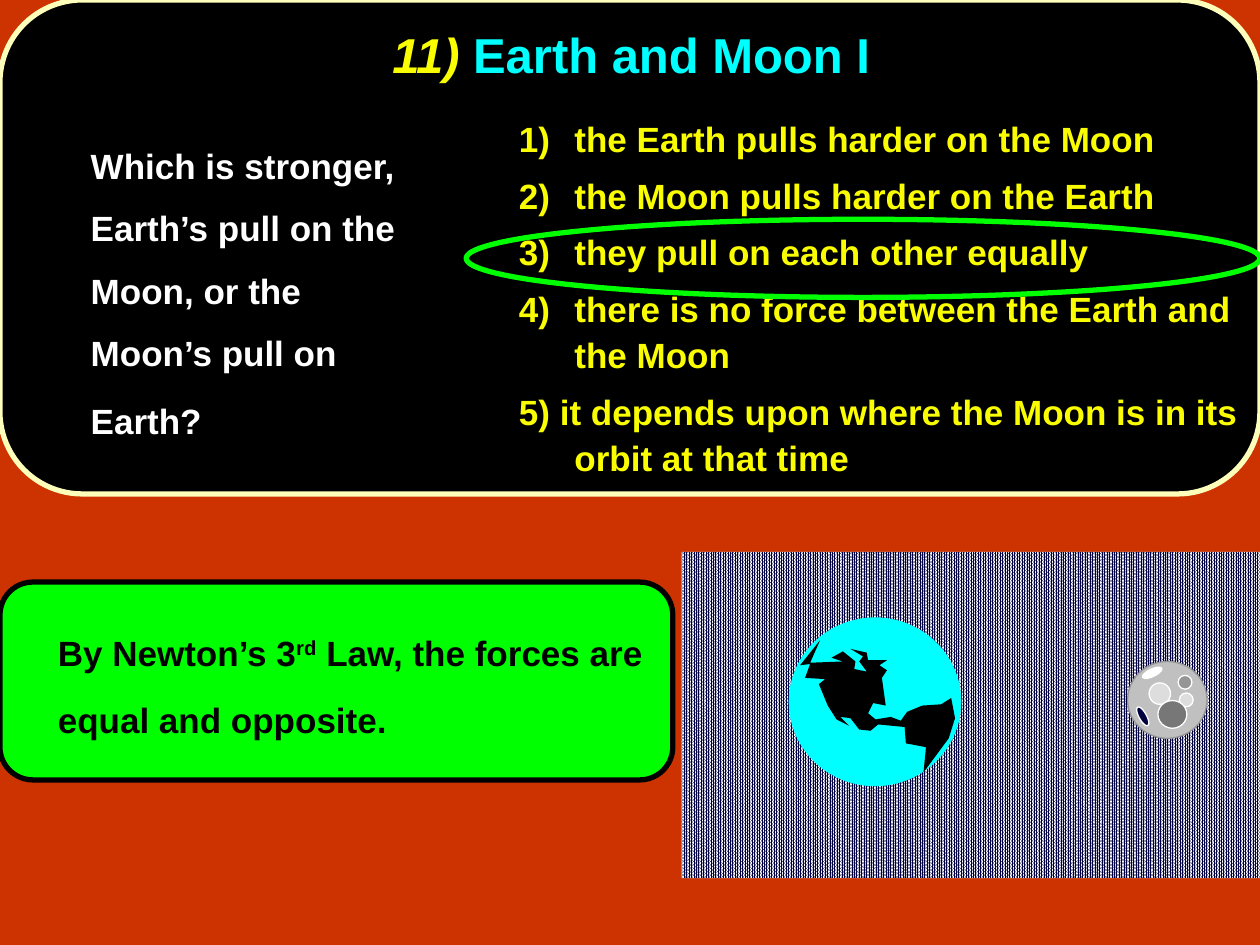
from lxml import etree
from pptx import Presentation
from pptx import util as u
from pptx.dml.color import RGBColor
from pptx.enum import dml, shapes, text
from pptx.oxml.ns import qn

PX = 9144  # EMU per px, 100 px to the inch
COLORS = {
    "red": "CC3300", "green": "00FF00", "black": "000000", "cream": "FCFEB9",
    "yellow": "FAFD00", "cyan": "00FFFF", "white": "FFFFFF", "navy": "000040",
    "moon": "C0C0C0", "grey": "969696", "pale": "DDDDDD", "dark": "777777",
}
ANSWERS = [
    "1)\tthe Earth pulls harder on the Moon",
    "2)\tthe Moon pulls harder on the Earth",
    "3)\tthey pull on each other equally",
    "4)\tthere is no force between the Earth and the Moon",
    "5) it depends upon where the Moon is in its orbit at that time",
]
CRATERS = [  # place, fill, rotation
    ((936, 550, 11, 11), "pale", 0),
    ((912, 542, 17, 17), "pale", 0),
    ((906, 531, 17, 6), "white", 335),
    ((904, 560, 6, 17), "navy", 331),
    ((919, 556, 23, 22), "dark", 0),
    ((935, 536, 11, 11), "grey", 0),
]
CONTINENTS = [
    (651, 508), (643, 526), (669, 525), (660, 522), (669, 517), (679, 525),
    (678, 531), (688, 533), (682, 525), (685, 521), (675, 515), (688, 518),
    (689, 524), (704, 524), (698, 528), (704, 532), (700, 538), (703, 560),
    (693, 558), (689, 566), (695, 571), (707, 569), (715, 572), (720, 565),
    (732, 560), (747, 559), (755, 554), (758, 570), (753, 586), (733, 613),
    (735, 593), (719, 590), (718, 577), (697, 575), (691, 580), (682, 579),
    (675, 570), (667, 569), (674, 576), (664, 571), (657, 560), (650, 543),
    (655, 539), (639, 538), (643, 527), (635, 528),
]


def color(name):
    return RGBColor.from_string(COLORS[name])


class Board:
    """Holds the text style and the slide; draws on the slide or a group."""

    font, size = "Arial", 20

    def __init__(self, slide):
        self.slide = slide
        self.target = slide.shapes

    def open_group(self):
        self.target = self.slide.shapes.add_group_shape().shapes

    def close_group(self):
        self.target = self.slide.shapes

    def paint(self, shape, fill, line, width):
        shape.shadow.inherit = False
        if fill:
            shape.fill.solid()
            shape.fill.fore_color.rgb = color(fill)
        else:
            shape.fill.background()
        if line:
            shape.line.color.rgb = color(line)
            shape.line.width = u.Pt(width)
        else:
            shape.line.fill.background()
        return shape

    def shape(self, kind, place, fill=None, line=None, width=3, turn=0):
        shape = self.target.add_shape(kind, *(n * PX for n in place))
        shape.rotation = turn
        return self.paint(shape, fill, line, width)

    def oval(self, place, *look, **more):
        return self.shape(shapes.MSO_SHAPE.OVAL, place, *look, **more)

    def panel(self, place, fill, line):
        return self.shape(shapes.MSO_SHAPE.ROUNDED_RECTANGLE, place, fill, line)

    def pattern(self, place, front, back):
        shape = self.shape(shapes.MSO_SHAPE.RECTANGLE, place)
        shape.fill.patterned()
        shape.fill.pattern = dml.MSO_PATTERN.PERCENT_90
        shape.fill.fore_color.rgb = color(front)
        shape.fill.back_color.rgb = color(back)

    def outline(self, points, fill):
        builder = self.target.build_freeform(*points[0], scale=PX)
        builder.add_line_segments(points[1:], close=True)
        self.paint(builder.convert_to_shape(), fill, None, 0)

    def placeholder(self, holder, place):
        """Moves a placeholder to its place, in front of what is drawn so far."""
        holder.left, holder.top, holder.width, holder.height = (n * PX for n in place)
        self.slide.shapes._spTree.append(holder._element)

    def textbox(self, place):
        return self.slide.shapes.add_textbox(*(n * PX for n in place))

    def span(self, para, words, ink, size=None, italic=False):
        span = para.add_run()
        span.text = words
        font = span.font
        font.name, font.size = self.font, u.Pt(size or self.size)
        font.bold, font.italic = True, italic
        font.color.rgb = color(ink)
        return span

    def paragraphs(self, box, count, spacing, hanging=False):
        """Prepares left-aligned, indented paragraphs without bullets."""
        frame = box.text_frame
        frame.word_wrap = True
        frame.auto_size = text.MSO_AUTO_SIZE.NONE
        paras = [frame.paragraphs[0]] + [frame.add_paragraph() for _ in range(count - 1)]
        for para in paras:
            para.line_spacing = spacing
            para.space_before = u.Pt(6)
            props = para._p.get_or_add_pPr()
            props.set("marL", str(44 * PX))
            props.set("indent", str(-44 * PX if hanging else 0))
            etree.SubElement(props, qn("a:buNone"))
        return paras


def main():
    deck = Presentation()
    deck.slide_width, deck.slide_height = 1000 * PX, 750 * PX
    slide = deck.slides.add_slide(deck.slide_layouts[1])
    slide.background.fill.solid()
    slide.background.fill.fore_color.rgb = color("red")
    title, body = slide.placeholders
    board = Board(slide)

    board.panel((0, 462, 534, 157), "green", "black")
    box = board.textbox((-8, 476, 539, 119))
    para = board.paragraphs(box, 1, 1.6)[0]
    board.span(para, "By Newton’s 3", "black")
    raised = board.span(para, "rd", "black")
    raised.font._element.set("baseline", "30000")
    board.span(para, " Law, the forces are equal and opposite.", "black")

    board.panel((0, 0, 1000, 392), "black", "cream")
    board.placeholder(title, (102, 0, 798, 92))
    title.text_frame.auto_size = text.MSO_AUTO_SIZE.NONE
    title.text_frame.vertical_anchor = text.MSO_ANCHOR.MIDDLE
    para = title.text_frame.paragraphs[0]
    para.alignment = text.PP_ALIGN.CENTER
    para.line_spacing = 0.9
    board.span(para, "11) ", "yellow", 28, italic=True)
    board.span(para, "Earth and Moon I", "cyan", 28)

    box = board.textbox((402, 85, 598, 306))
    paras = board.paragraphs(box, len(ANSWERS), 1.1, hanging=True)
    for para, answer in zip(paras, ANSWERS):
        board.span(para, answer, "yellow")
    board.oval((370, 174, 630, 62), None, "green")

    board.open_group()
    board.pattern((541, 438, 459, 259), "navy", "white")
    board.oval((626, 490, 137, 134), "cyan")
    board.outline(CONTINENTS, "black")
    board.oval((895, 525, 63, 61), "moon", "grey", 0.75)
    for place, fill, turn in CRATERS:
        board.oval(place, fill, "white", 0.75, turn=turn)
    board.close_group()

    board.placeholder(body, (18, 93, 334, 265))
    para = board.paragraphs(body, 1, 1.49)[0]
    board.span(para, "Which is stronger, Earth’s pull on the Moon, "
                     "or the Moon’s pull on Earth?", "white")
    board.span(para, " ", "white", 22)

    deck.save("out.pptx")


if __name__ == "__main__":
    main()
